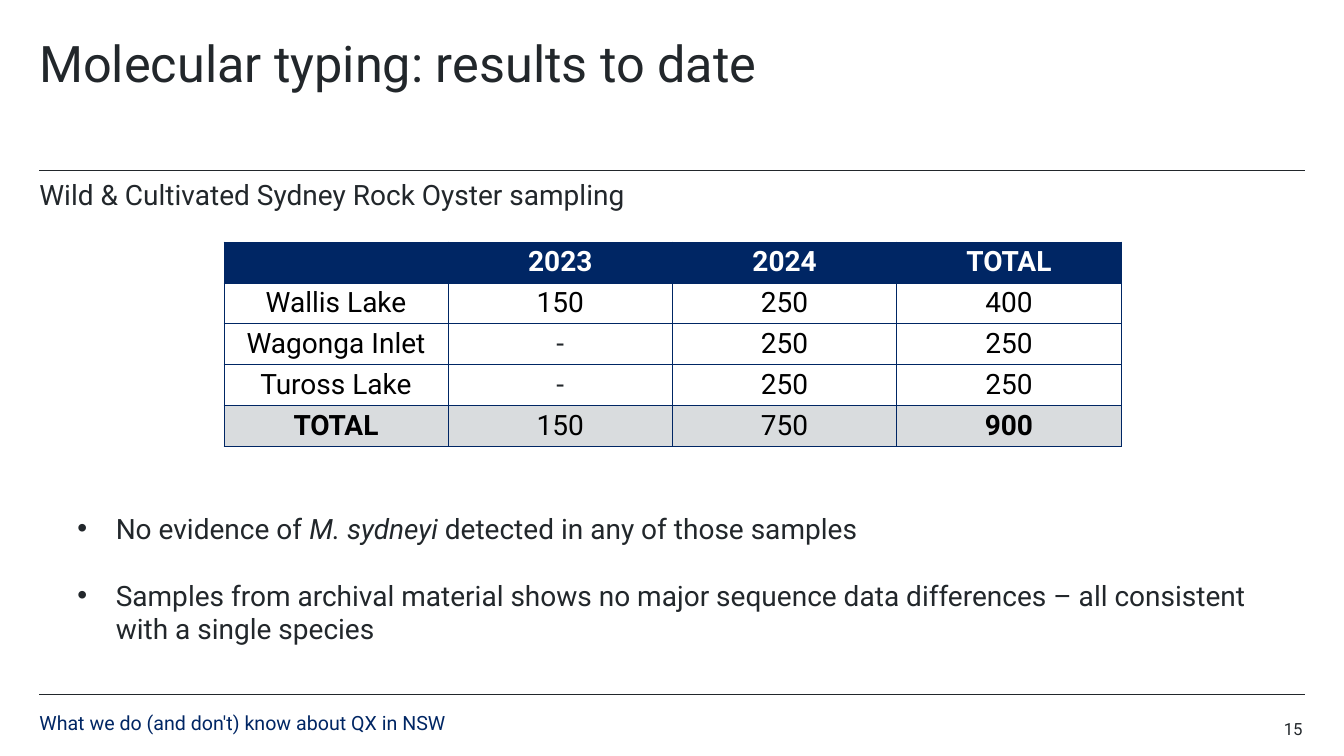
from pptx import Presentation
from pptx.dml.color import RGBColor
from pptx.enum.shapes import MSO_CONNECTOR
from pptx.enum.text import MSO_ANCHOR, PP_ALIGN
from pptx.oxml.ns import qn
from pptx.util import Inches, Pt
from lxml import etree

STRAIGHT = MSO_CONNECTOR.STRAIGHT
MIDDLE = MSO_ANCHOR.MIDDLE
LEFT, CENTER, RIGHT = PP_ALIGN.LEFT, PP_ALIGN.CENTER, PP_ALIGN.RIGHT

COLORS = {"ink": "22272B", "navy": "002664", "white": "FFFFFF",
          "black": "000000", "grey": "D9DCDE"}
FONT = "Roboto"
MARGIN_LEFT, MARGIN_RIGHT = 0.39, 12.94

SAMPLES = [
    ["", "2023", "2024", "TOTAL"],
    ["Wallis Lake", "150", "250", "400"],
    ["Wagonga Inlet", "-", "250", "250"],
    ["Tuross Lake", "-", "250", "250"],
    ["TOTAL", "150", "750", "900"],
]
FINDINGS = [
    [("No evidence of ", False), ("M. sydneyi ", True),
     ("detected in any of those samples", False)],
    [("Samples from archival material shows no major sequence data differences "
      "– all consistent with a single species", False)],
]


def rgb(name):
    return RGBColor.from_string(COLORS[name])


def write(paragraph, text, size=20, color="ink", bold=False, italic=False,
          align=LEFT, spacing=None):
    paragraph.alignment = align
    if spacing:
        paragraph.line_spacing = spacing
    run = paragraph.add_run()
    run.text = text
    font = run.font
    font.name, font.size, font.bold, font.italic = FONT, Pt(size), bold, italic
    font.color.rgb = rgb(color)


def text_frame(slide, box, inset=0):
    frame = slide.shapes.add_textbox(*map(Inches, box)).text_frame
    frame.word_wrap = True
    if not inset:
        frame.margin_left = frame.margin_right = 0
        frame.margin_top = frame.margin_bottom = 0
    return frame


def add_rule(slide, y):
    rule = slide.shapes.add_connector(STRAIGHT, Inches(MARGIN_LEFT), Inches(y),
                                      Inches(MARGIN_RIGHT), Inches(y))
    rule.line.color.rgb = rgb("ink")
    rule.line.width = Pt(0.5)
    etree.SubElement(rule._element.spPr, qn("a:effectLst"))


def add_header(slide, left, top):
    title = text_frame(slide, (left, top, 10.63, 1.1))
    write(title.paragraphs[0], "Molecular typing: results to date", size=36, spacing=0.9)
    add_rule(slide, top + 1.3)
    subtitle = text_frame(slide, (left, top + 1.41, 6.52, 0.43))
    write(subtitle.paragraphs[0], "Wild & Cultivated Sydney Rock Oyster sampling",
          spacing=0.9)


def add_footer(slide, left, top):
    add_rule(slide, top)
    talk = text_frame(slide, (left, top + 0.16, 7.35, 0.28))
    write(talk.paragraphs[0], "What we do (and don't) know about QX in NSW",
          size=14, color="navy")
    number = text_frame(slide, (left + 11.99, top + 0.24, 0.54, 0.2))
    write(number.paragraphs[0], "15", size=12, align=RIGHT)


def set_borders(cell, widths):
    properties = cell._tc.get_or_add_tcPr()
    for side, width in zip("LRTB", widths):
        line = etree.SubElement(properties, qn(f"a:ln{side}"), w=str(Pt(width)))
        fill = etree.SubElement(line, qn("a:solidFill"))
        etree.SubElement(fill, qn("a:srgbClr"), val=COLORS["navy"])


def add_samples_table(slide, left, top, width, height):
    rows, columns = len(SAMPLES), len(SAMPLES[0])
    table = slide.shapes.add_table(rows, columns, Inches(left), Inches(top),
                                   Inches(width), Inches(height)).table
    table.horz_banding = False
    for r, values in enumerate(SAMPLES):
        is_header, is_total = r == 0, r == rows - 1
        for c, value in enumerate(values):
            cell = table.cell(r, c)
            cell.vertical_anchor = MIDDLE
            cell.margin_left = cell.margin_right = 0
            cell.margin_top = cell.margin_bottom = 0
            set_borders(cell, (1 if c else 0.5, 1, 0.5, 0.5))
            cell.fill.solid()
            cell.fill.fore_color.rgb = rgb(
                "navy" if is_header else "grey" if is_total else "white")
            if value:
                color = "white" if is_header else "ink" if value == "-" else "black"
                write(cell.text_frame.paragraphs[0], value, color=color, align=CENTER,
                      bold=is_header or (is_total and c in (0, columns - 1)))


def add_findings(slide, left, top, width, height):
    frame = text_frame(slide, (left, top, width, height), inset=True)
    for i, finding in enumerate(FINDINGS):
        paragraph = frame.add_paragraph() if i else frame.paragraphs[0]
        if i:
            paragraph.space_before = Pt(24)
        properties = paragraph._p.get_or_add_pPr()
        properties.set("marL", str(Inches(0.38)))
        properties.set("indent", str(Inches(-0.38)))
        etree.SubElement(properties, qn("a:buFont"), typeface="Arial")
        etree.SubElement(properties, qn("a:buChar"), char="•")
        for text, italic in finding:
            write(paragraph, text, italic=italic)


def main():
    deck = Presentation()
    deck.slide_width, deck.slide_height = Inches(13.33), Inches(7.5)
    slide = deck.slides.add_slide(deck.slide_layouts[6])
    add_header(slide, MARGIN_LEFT, 0.39)
    add_samples_table(slide, 2.22, 2.4, 8.9, 2.03)
    add_findings(slide, 0.67, 5.02, 12.1, 1.85)
    add_footer(slide, MARGIN_LEFT, 6.89)
    deck.save("out.pptx")


if __name__ == "__main__":
    main()
